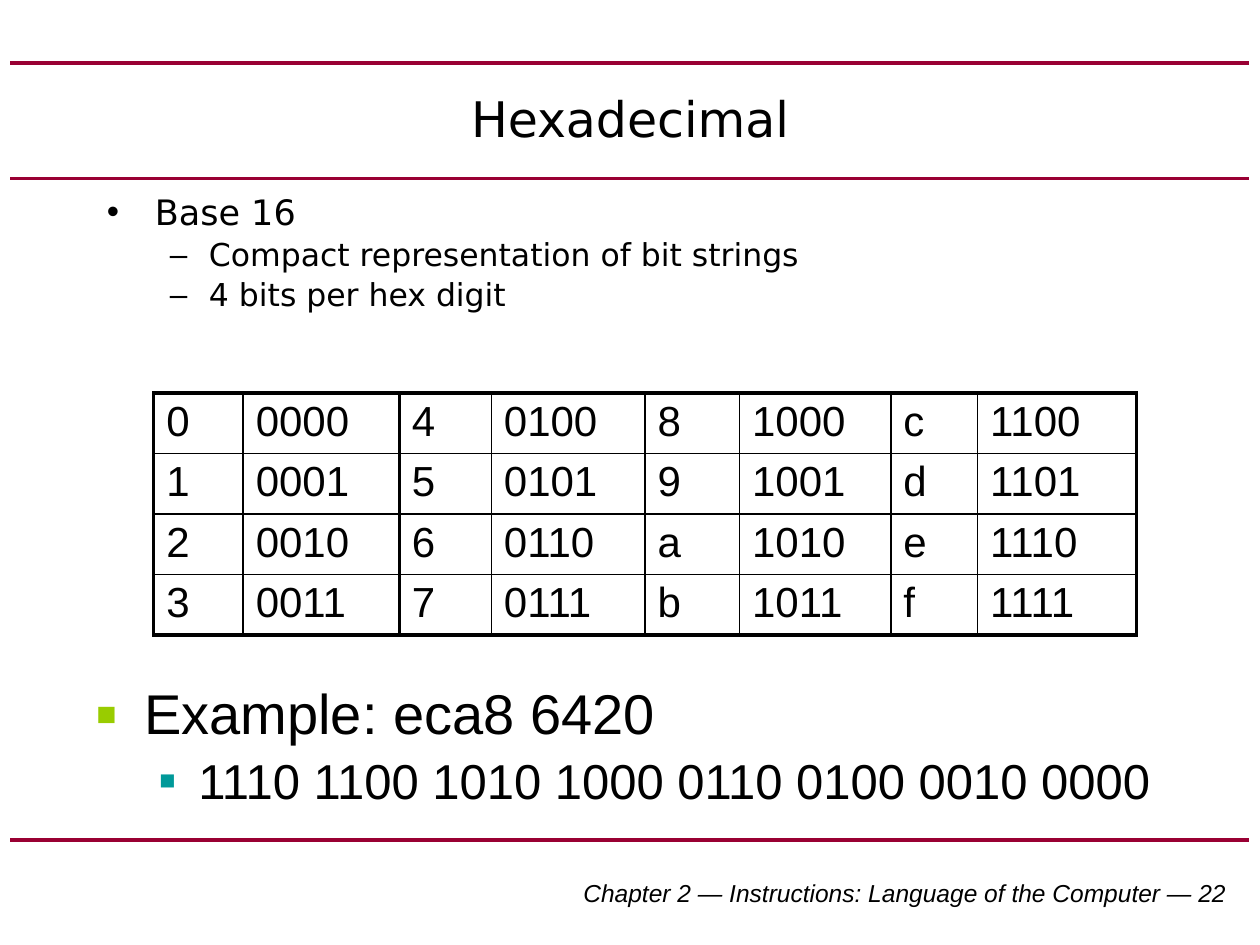
from typing import NamedTuple

from lxml.etree import SubElement
from pptx import Presentation
from pptx.dml.color import RGBColor
from pptx.enum.shapes import MSO_CONNECTOR
from pptx.enum.text import MSO_ANCHOR, PP_ALIGN
from pptx.oxml.ns import qn
from pptx.util import Emu, Inches, Pt

LINE = MSO_CONNECTOR.STRAIGHT
MIDDLE = MSO_ANCHOR.MIDDLE
CENTER, RIGHT = PP_ALIGN.CENTER, PP_ALIGN.RIGHT

# The slide is a grid of 120 columns by 90 rows.
COLS, ROWS = 120, 90
UNIT = Inches(10) // COLS

BLACK, RED, GREEN, TEAL = "000000", "990033", "99CC00", "009999"
SANS, ARIAL = "DejaVu Sans", "Arial"
RULES = (80, 17, 6)
WIDTHS = (8.52, 14.88, 8.76, 14.64, 9, 14.4, 8.28, 15.12)
DEPTH, HEIGHT = 4, 5.66
INDENTS = ((0.38, -0.38), (0.81, -0.31))


class Box(NamedTuple):
    left: float
    top: float
    width: float
    height: float


class Item(NamedTuple):
    text: str
    level: int
    size: float
    mark: str
    color: str = BLACK
    scale: int = 100


BASE = (
    Item("Base 16", 0, 20, "•"),
    Item("Compact representation of bit strings", 1, 18, "–"),
    Item("4 bits per hex digit", 1, 18, "–"),
)
SAMPLE = (
    Item("Example: eca8 6420", 0, 32, "■", GREEN, 60),
    Item("1110 1100 1010 1000 0110 0100 0010 0000", 1, 28, "■", TEAL, 55),
)


def grid(count: float) -> Emu:
    return Emu(round(count * UNIT))


def rgb(color: str) -> RGBColor:
    return RGBColor.from_string(color)


def style(para, face: str, size: float) -> None:
    font = para.font
    font.name, font.size = face, Pt(size)
    font.color.rgb = rgb(BLACK)


def add_rule(slide, row: float) -> None:
    rule = slide.shapes.add_connector(
        LINE, grid(1), grid(row), grid(COLS - 1), grid(row))
    rule.line.color.rgb = rgb(RED)
    rule.line.width = Pt(2.25)
    SubElement(rule._element.spPr, qn("a:effectLst"))


def add_box(slide, box: Box):
    frame = slide.shapes.add_textbox(*map(grid, box)).text_frame
    frame.word_wrap = True
    return frame


def set_mark(para, item: Item) -> None:
    """Give the paragraph its hanging indent and bullet."""
    props = para._p.get_or_add_pPr()
    left, hang = INDENTS[item.level]
    props.set("marL", str(Inches(left)))
    props.set("indent", str(Inches(hang)))
    tint = SubElement(props, qn("a:buClr"))
    SubElement(tint, qn("a:srgbClr"), val=item.color)
    SubElement(props, qn("a:buSzPct"), val=str(item.scale * 1000))
    SubElement(props, qn("a:buFont"), typeface=ARIAL)
    SubElement(props, qn("a:buChar"), char=item.mark)


def add_list(slide, box: Box, items: tuple[Item, ...], face: str) -> None:
    frame = add_box(slide, box)
    for i, item in enumerate(items):
        para = frame.add_paragraph() if i else frame.paragraphs[0]
        para.text, para.level = item.text, item.level
        set_mark(para, item)
        para.line_spacing = 0.9
        if i:
            para.space_before = Pt(item.size * 0.2)
        style(para, face, item.size)


def set_edge(cell, side: str, width: float) -> None:
    edge = SubElement(cell._tc.get_or_add_tcPr(), qn(f"a:{side}"),
                      w=str(Pt(width)))
    fill = SubElement(edge, qn("a:solidFill"))
    SubElement(fill, qn("a:srgbClr"), val=BLACK)


def weigh_col(edge: int) -> float:
    """Heavy outside, medium between digit pairs, thin within a pair."""
    if edge in (0, len(WIDTHS)):
        return 2.25
    return 1 if edge % 2 else 1.5


def weigh_row(edge: int) -> float:
    return 2.25 if edge in (0, DEPTH) else 1


def fill_cell(cell, row: int, col: int) -> None:
    value = col // 2 * DEPTH + row
    cell.text = format(value, "04b" if col % 2 else "x")
    style(cell.text_frame.paragraphs[0], ARIAL, 24)
    cell.margin_top = cell.margin_bottom = Inches(0.04)
    set_edge(cell, "lnL", weigh_col(col))
    set_edge(cell, "lnR", weigh_col(col + 1))
    set_edge(cell, "lnT", weigh_row(row))
    set_edge(cell, "lnB", weigh_row(row + 1))
    cell.fill.background()


def add_digits(slide) -> None:
    box = Box(14.64, 37.44, sum(WIDTHS), DEPTH * HEIGHT)
    table = slide.shapes.add_table(
        DEPTH, len(WIDTHS), *map(grid, box)).table
    table.first_row = table.horz_banding = False
    for col, width in enumerate(WIDTHS):
        table.columns[col].width = grid(width)
    for row in range(DEPTH):
        table.rows[row].height = grid(HEIGHT)
        for col in range(len(WIDTHS)):
            fill_cell(table.cell(row, col), row, col)


def set_title(slide, text: str, box: Box) -> None:
    title = slide.shapes.title
    title.left, title.top, title.width, title.height = map(grid, box)
    frame = title.text_frame
    frame.text, frame.vertical_anchor = text, MIDDLE
    para = frame.paragraphs[0]
    para.alignment = CENTER
    style(para, SANS, 28)


def add_foot(slide, text: str, box: Box) -> None:
    para = add_box(slide, box).paragraphs[0]
    para.text, para.alignment = text, RIGHT
    style(para, ARIAL, 14)
    para.font.italic = True


def main() -> None:
    deck = Presentation()
    deck.slide_width, deck.slide_height = grid(COLS), grid(ROWS)
    slide = deck.slides.add_slide(deck.slide_layouts[5])
    for row in RULES:
        add_rule(slide, row)
    add_foot(slide, "Chapter 2 — Instructions: Language of the Computer — 22",
             Box(45, 83, 73, 4))
    set_title(slide, "Hexadecimal", Box(6, 6, 108, 10.4))
    add_list(slide, Box(9, 18, 108.6, 17.5), BASE, SANS)
    add_digits(slide)
    add_list(slide, Box(8, 64.8, 108.6, 15.1), SAMPLE, ARIAL)
    deck.save("out.pptx")


if __name__ == "__main__":
    main()
